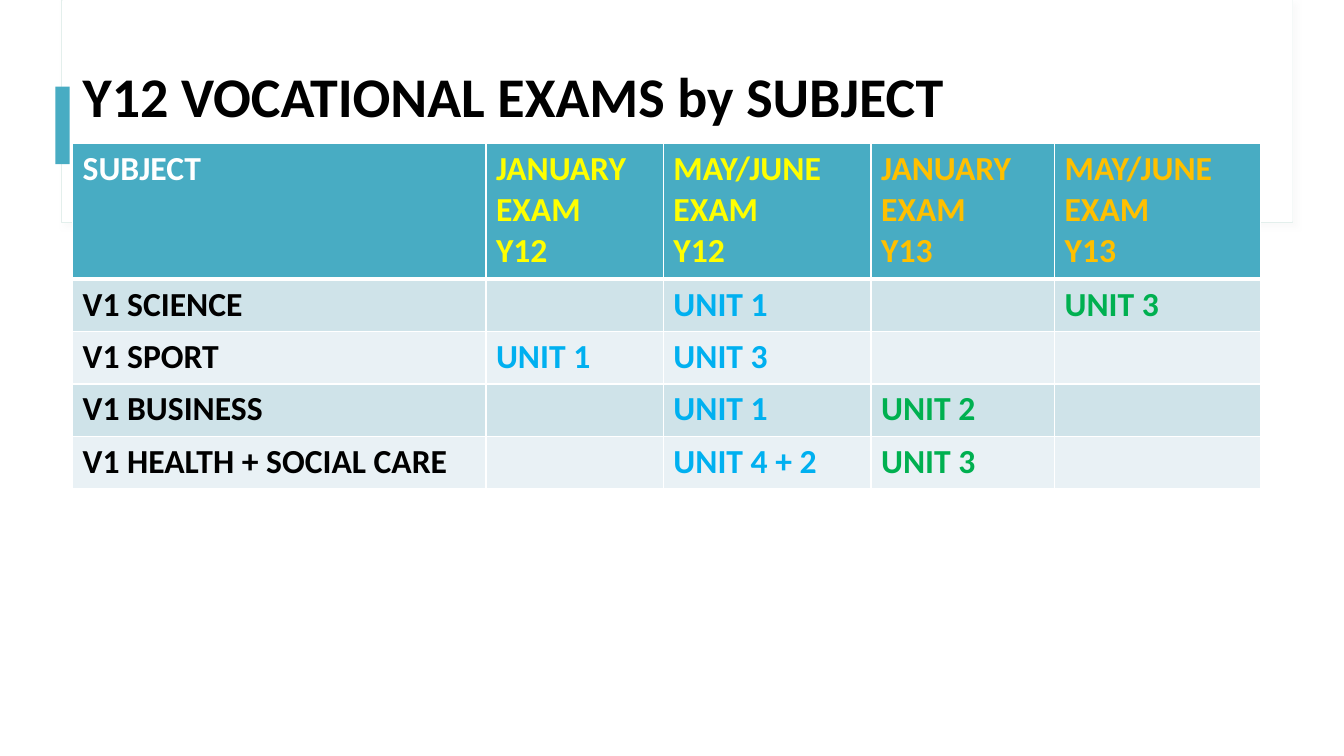
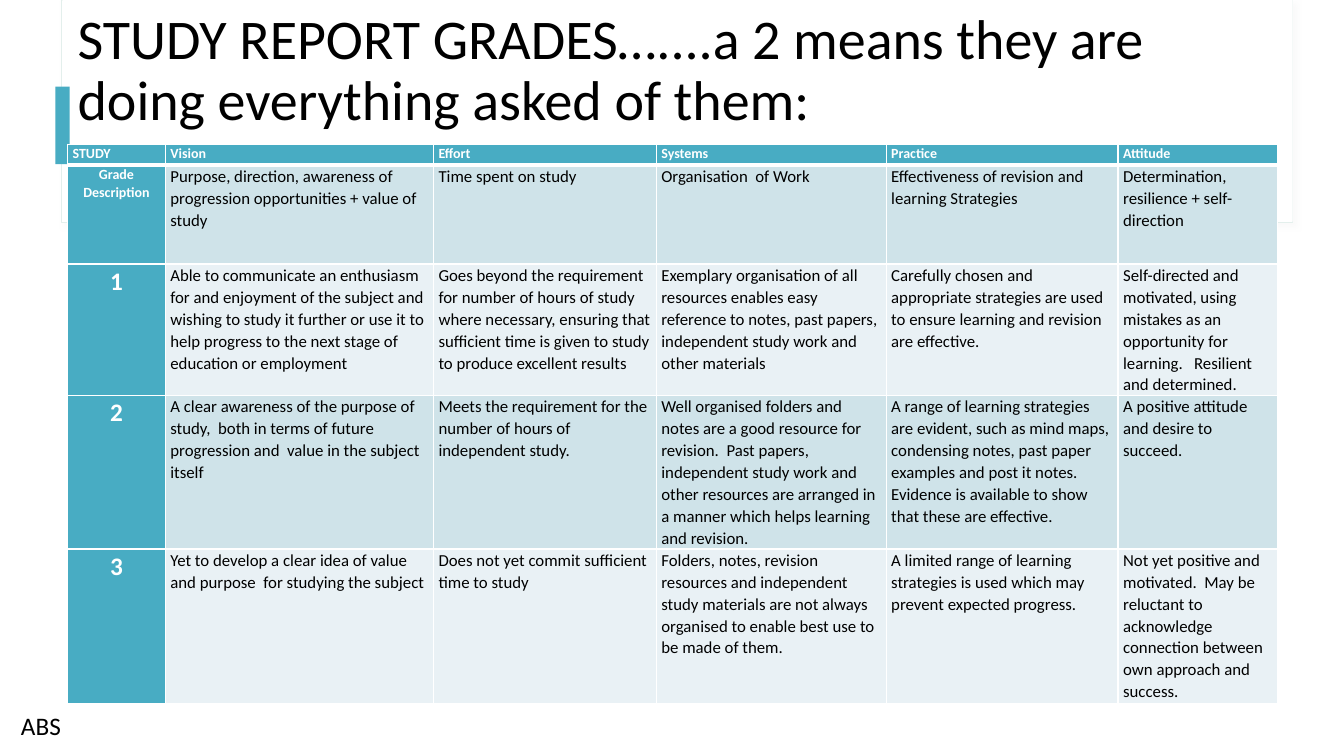
from dataclasses import dataclass

from lxml.etree import SubElement
from pptx import Presentation
from pptx.dml.color import RGBColor
from pptx.enum.shapes import MSO_SHAPE, PP_PLACEHOLDER
from pptx.enum.text import MSO_ANCHOR, MSO_AUTO_SIZE, PP_ALIGN
from pptx.oxml import parse_xml
from pptx.oxml.ns import nsdecls, qn
from pptx.util import Inches, Pt


@dataclass(frozen=True)
class Theme:
    """Colours, font and type sizes shared by the slides."""

    font: str = "Calibri"
    accent: str = "48ACC3"
    bands: tuple = ("CFE3E9", "E9F1F5")
    white: str = "FFFFFF"
    ink: str = "000000"
    frame_line: str = "E3EFEC"
    shadow: str = "D9D9D9"
    year_headers: tuple = ("FFFF00", "FFC000")
    year_units: tuple = ("00B0F0", "00B050")
    title_size: int = 40
    exam_size: int = 24
    grade_size: int = 18
    body_size: int = 12
    label_size: int = 10
    rule: int = 1
    header_rule: int = 3


THEME = Theme()

EXAM_COLUMNS = (4.1, 1.76, 2.06, 1.82, 2.04)
EXAM_ROWS = (1.35, 0.52, 0.52, 0.52, 0.52)
EXAMS = (
    ("SUBJECT", "JANUARY EXAM\nY12", "MAY/JUNE EXAM\nY12", "JANUARY EXAM\nY13", "MAY/JUNE EXAM\nY13"),
    ("V1 SCIENCE", "", "UNIT 1", "", "UNIT 3"),
    ("V1 SPORT", "UNIT 1", "UNIT 3", "", ""),
    ("V1 BUSINESS", "", "UNIT 1", "UNIT 2", ""),
    ("V1 HEALTH + SOCIAL CARE", "", "UNIT 4 + 2", "UNIT 3", ""),
)

GRADE_COLUMNS = (0.97, 2.66, 2.21, 2.28, 2.3, 1.58)
GRADE_ROWS = (0.21, 0.98, 1.3, 1.52, 1.53)
GRADES = (
    ("STUDY", "Vision", "Effort", "Systems", "Practice", "Attitude"),
    (
        "Grade Description",
        "Purpose, direction, awareness of progression opportunities + value of study",
        "Time spent on study",
        "Organisation  of Work",
        "Effectiveness of revision and learning Strategies",
        "Determination, resilience + self-direction",
    ),
    (
        "1",
        "Able to communicate an enthusiasm for and enjoyment of the subject and wishing to study it "
        "further or use it to help progress to the next stage of education or employment",
        "Goes beyond the requirement for number of hours of study where necessary, ensuring that "
        "sufficient time is given to study to produce excellent results",
        "Exemplary organisation of all resources enables easy reference to notes, past papers, "
        "independent study work and other materials",
        "Carefully chosen and appropriate strategies are used to ensure learning and revision are effective.",
        "Self-directed and motivated, using mistakes as an opportunity for learning.   "
        "Resilient and determined.",
    ),
    (
        "2",
        "A clear awareness of the purpose of study,  both in terms of future progression and  "
        "value in the subject itself",
        "Meets the requirement for the number of hours of independent study.",
        "Well organised folders and notes are a good resource for revision.  Past papers, independent "
        "study work and other resources are arranged in a manner which helps learning and revision.",
        "A range of learning strategies are evident, such as mind maps, condensing notes, past paper "
        "examples and post it notes.  Evidence is available to show that these are effective.",
        "A positive attitude and desire to succeed.",
    ),
    (
        "3",
        "Yet to develop a clear idea of value and purpose  for studying the subject",
        "Does not yet commit sufficient time to study",
        "Folders, notes, revision resources and independent study materials are not always organised "
        "to enable best use to be made of them.",
        "A limited range of learning strategies is used which may prevent expected progress.",
        "Not yet positive and motivated.  May be reluctant to acknowledge connection between own "
        "approach and success.",
    ),
)


def write(frame, text, *, size, color=THEME.ink, bold=False, align=PP_ALIGN.LEFT, spacing=1.0, after=0):
    """Fill a text frame, one paragraph for each line of text."""
    frame.word_wrap = True
    for index, line in enumerate(text.split("\n")):
        paragraph = frame.add_paragraph() if index else frame.paragraphs[0]
        paragraph.alignment = align
        paragraph.line_spacing = spacing
        paragraph.space_before = Pt(0)
        paragraph.space_after = Pt(after)
        run = paragraph.add_run()
        run.text = line
        run.font.name = THEME.font
        run.font.size = Pt(size)
        run.font.bold = bold
        run.font.color.rgb = RGBColor.from_string(color)


def add_panel(slide, box, fill, line=None):
    """Draw a plain rectangle in the box."""
    panel = slide.shapes.add_shape(MSO_SHAPE.RECTANGLE, *map(Inches, box))
    panel.shadow.inherit = False
    panel.fill.solid()
    panel.fill.fore_color.rgb = RGBColor.from_string(fill)
    if line:
        panel.line.color.rgb = RGBColor.from_string(line)
        panel.line.width = Pt(0.75)
    else:
        panel.line.fill.background()
    return panel


def add_soft_shadow(panel):
    """Give a panel a faint shadow towards the lower right."""
    effects = panel.element.spPr.find(qn("a:effectLst"))
    effects.append(parse_xml(
        f'<a:outerShdw {nsdecls("a")} blurRad="{Pt(4)}" dist="{Pt(3)}" dir="2700000" algn="tl" rotWithShape="0">'
        f'<a:srgbClr val="{THEME.shadow}"><a:alpha val="12000"/></a:srgbClr></a:outerShdw>'
    ))


def move_backdrop_to_layout(slide, layout):
    """Build the title frame and accent bar and hand them to the layout."""
    for holder in list(layout.placeholders):
        if holder.placeholder_format.type != PP_PLACEHOLDER.TITLE:
            layout.shapes.element.remove(holder.element)
    title_frame = add_panel(slide, (0.61, 0, 12.21, 2.21), THEME.white, THEME.frame_line)
    add_soft_shadow(title_frame)
    title_panel = add_panel(slide, (0.62, 0, 12.2, 2.2), THEME.white)
    accent_bar = add_panel(slide, (0.55, 0.86, 0.14, 0.77), THEME.accent)
    for part in (title_frame, title_panel, accent_bar):
        layout.shapes.element.append(part.element)


def place_title(slide, box, text, bold=False):
    """Move the title into the box and format it."""
    title = slide.shapes.title
    title.left, title.top, title.width, title.height = map(Inches, box)
    frame = title.text_frame
    frame.auto_size = MSO_AUTO_SIZE.NONE
    frame.vertical_anchor = MSO_ANCHOR.MIDDLE
    write(frame, text, size=THEME.title_size, bold=bold, spacing=0.9)


def rule_cell(cell, row):
    """Draw white cell borders, heavier under the header row."""
    top = THEME.header_rule if row == 1 else THEME.rule
    bottom = THEME.header_rule if row == 0 else THEME.rule
    properties = cell._tc.get_or_add_tcPr()
    for side, width in (("L", THEME.rule), ("R", THEME.rule), ("T", top), ("B", bottom)):
        border = SubElement(properties, qn(f"a:ln{side}"), w=str(Pt(width)))
        SubElement(SubElement(border, qn("a:solidFill")), qn("a:srgbClr"), val=THEME.white)


def place_table(slide, origin, columns, rows, content, cell_format, accent_column=False, margins=None):
    """Set a banded table at the origin, with text formatted by position."""
    size = (sum(columns), sum(rows))
    table = slide.shapes.add_table(len(rows), len(columns), *map(Inches, origin + size)).table
    table.horz_banding = False
    for column, width in zip(table.columns, columns):
        column.width = Inches(width)
    for row, (line, height) in enumerate(zip(content, rows)):
        table.rows[row].height = Inches(height)
        for column, text in enumerate(line):
            cell = table.cell(row, column)
            rule_cell(cell, row)
            accented = row == 0 or (accent_column and column == 0)
            cell.fill.solid()
            cell.fill.fore_color.rgb = RGBColor.from_string(
                THEME.accent if accented else THEME.bands[(row - 1) % 2]
            )
            if margins:
                cell.margin_left = cell.margin_right = Inches(margins[0])
                cell.margin_top = cell.margin_bottom = Inches(margins[1])
            if text:
                write(cell.text_frame, text, **cell_format(row, column))


def exam_format(row, column):
    """Colour exam cells by school year."""
    if column == 0:
        color = THEME.ink if row else THEME.white
    else:
        year = (column - 1) // 2
        color = (THEME.year_units if row else THEME.year_headers)[year]
    return {"size": THEME.exam_size, "color": color, "bold": True}


def grade_format(row, column):
    """Set labels in bold white, grades large and descriptions plain."""
    style = {"size": THEME.body_size, "spacing": 1.07, "after": 8}
    if row == 0 or column == 0:
        size = THEME.grade_size if row > 1 else THEME.label_size
        style.update(size=size, color=THEME.white, bold=True)
    if row and column == 0:
        style["align"] = PP_ALIGN.CENTER
    return style


def build_exams(slide):
    """Show the vocational exams by subject."""
    left, top, width = 0.72, 1.42, 11.78
    place_title(slide, (left, 0.55, width, 0.88), "Y12 VOCATIONAL EXAMS by SUBJECT", bold=True)
    place_table(slide, (left, top), EXAM_COLUMNS, EXAM_ROWS, EXAMS, exam_format)


def build_grades(slide):
    """Show the report grades and the footer tag."""
    left, top = 0.67, 1.43
    place_title(
        slide, (left, 0, 11.98, top),
        "STUDY REPORT GRADES…....a 2 means they are doing everything asked of them:",
    )
    place_table(
        slide, (left, top), GRADE_COLUMNS, GRADE_ROWS, GRADES, grade_format,
        accent_column=True, margins=(0.05, 0),
    )
    tag = slide.shapes.add_textbox(*map(Inches, (0.11, 7, 0.81, 0.4)))
    write(tag.text_frame, "ABS", size=THEME.grade_size)


def main():
    """Build and save the presentation."""
    deck = Presentation()
    deck.slide_width, deck.slide_height = Inches(13.33), Inches(7.5)
    layout = deck.slide_layouts[5]
    exams, grades = (deck.slides.add_slide(layout) for _ in range(2))
    move_backdrop_to_layout(exams, layout)
    build_exams(exams)
    build_grades(grades)
    deck.save("out.pptx")


if __name__ == "__main__":
    main()
